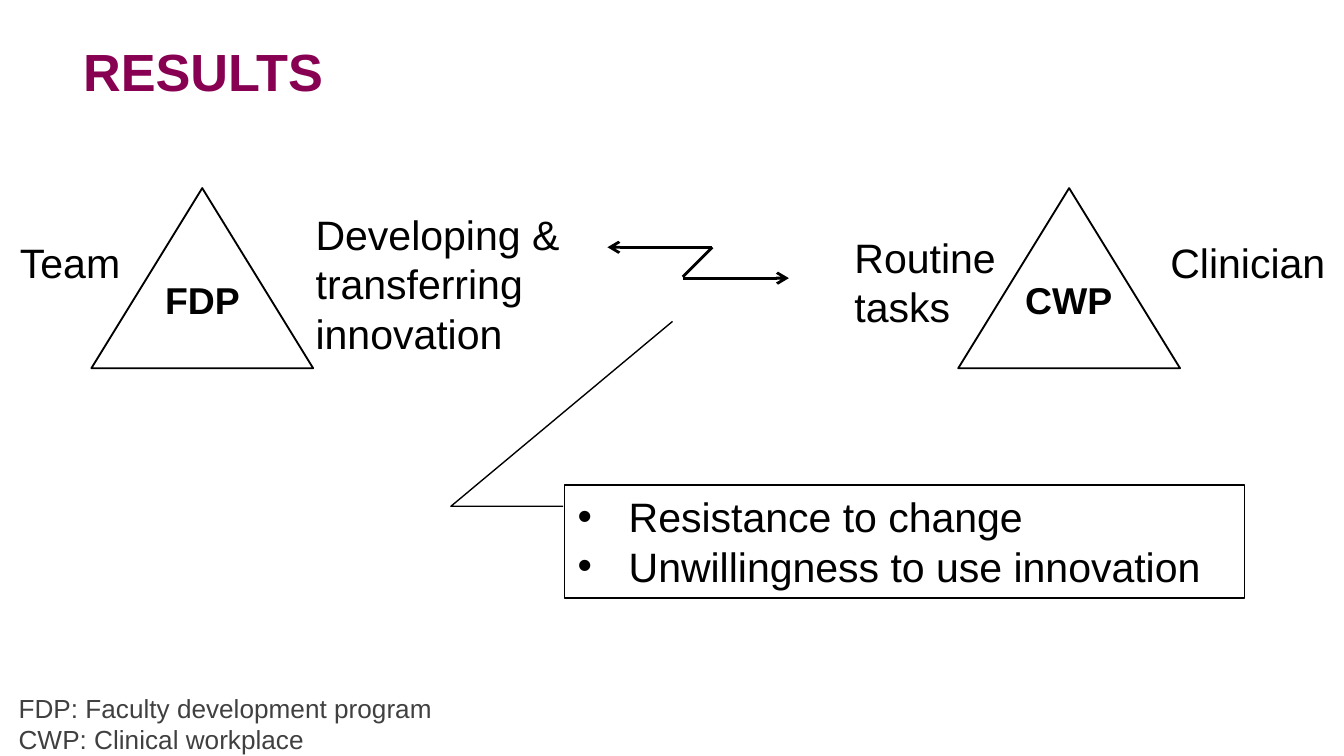
from pptx import Presentation
from pptx.dml.color import RGBColor
from pptx.enum.shapes import MSO_CONNECTOR, MSO_SHAPE
from pptx.enum.text import MSO_ANCHOR, PP_ALIGN
from pptx.oxml.ns import qn
from pptx.util import Inches, Pt
from lxml.etree import SubElement

COLORS = {"ink": "000000", "plum": "870052", "gray": "404040"}
FONT = "Arial"
WIDE = 10
HIGH = WIDE * 9 / 16

TITLE = (["RESULTS"], (0.52, 0.24, 8.5, 0.94), 28, "plum", True)
NOTES = (["FDP: Faculty development program", "CWP: Clinical workplace"],
         (0.04, 5.1, 4.38, 0.24), 14, "gray", False)
LABELS = [
    (["Developing & transferring innovation"], (2.25, 1.51, 2.59, 1.21)),
    (["Team"], (0.05, 1.72, 1.08, 0.47)),
    (["Clinician"], (8.61, 1.72, 2.59, 0.47)),
    (["Routine tasks"], (6.26, 1.68, 1.27, 0.84)),
]
SYSTEMS = [("FDP", 0.68, 1.13, 0.76), ("CWP", 7.13, 7.53, 0.89)]
TRI_TOP, TRI_WIDE, TRI_HIGH = 1.4, 1.65, 1.34
BOLT = [((5.3, 1.84), (5.08, 2.06), False),
        ((5.08, 2.07), (5.87, 2.07), True),
        ((5.3, 1.84), (4.52, 1.84), True)]
BARRIERS = ["Resistance to change", "Unwillingness to use innovation"]
CALLOUT = (4.2, 3.61, 5.06, 0.84)
POINTER = (0.188, -0.002, 0.188, -0.167, -1.45, 0.159)


def color(name):
    return RGBColor.from_string(COLORS[name])


def write(shape, lines, size=22, tone="ink", bold=False, bullet=False):
    frame = shape.text_frame
    frame.word_wrap = True
    frame.vertical_anchor = MSO_ANCHOR.TOP
    frame.text = "\n".join(lines)
    for para in frame.paragraphs:
        para.alignment = PP_ALIGN.LEFT
        if bullet:
            props = para._p.get_or_add_pPr()
            props.set("marL", str(Inches(0.38)))
            props.set("indent", str(Inches(-0.38)))
            SubElement(props, qn("a:buFont")).set("typeface", FONT)
            SubElement(props, qn("a:buChar")).set("char", "•")
        font = para.font
        font.name, font.size, font.bold = FONT, Pt(size), bold
        font.color.rgb = color(tone)


def label(slide, lines, box, *style):
    write(slide.shapes.add_textbox(*map(Inches, box)), lines, *style)


def outline(slide, kind, box, width):
    shape = slide.shapes.add_shape(kind, *map(Inches, box))
    shape.shadow.inherit = False
    shape.fill.background()
    shape.line.color.rgb = color("ink")
    shape.line.width = Pt(width)
    return shape


def stroke(slide, start, end, arrow):
    line = slide.shapes.add_connector(
        MSO_CONNECTOR.STRAIGHT, *map(Inches, start + end))
    line.line.color.rgb = color("ink")
    line.line.width = Pt(1.5)
    if arrow:
        SubElement(line.line._get_or_add_ln(), qn("a:tailEnd")).set("type", "arrow")
    SubElement(line._element.spPr, qn("a:effectLst"))


def main():
    deck = Presentation()
    deck.slide_width, deck.slide_height = Inches(WIDE), Inches(HIGH)
    slide = deck.slides.add_slide(deck.slide_layouts[6])

    label(slide, *TITLE)
    for name, left, start, wide in SYSTEMS:
        outline(slide, MSO_SHAPE.ISOSCELES_TRIANGLE,
                (left, TRI_TOP, TRI_WIDE, TRI_HIGH), 1)
        label(slide, [name], (start, 2.01, wide, 0.44), 20, "ink", True)
    for lines, box in LABELS:
        label(slide, lines, box)
    for part in BOLT:
        stroke(slide, *part)

    note = outline(slide, MSO_SHAPE.LINE_CALLOUT_2, CALLOUT, 0.75)
    for i, share in enumerate(POINTER):
        note.adjustments[i] = share
    write(note, BARRIERS, bullet=True)
    label(slide, *NOTES)
    deck.save("out.pptx")


if __name__ == "__main__":
    main()
